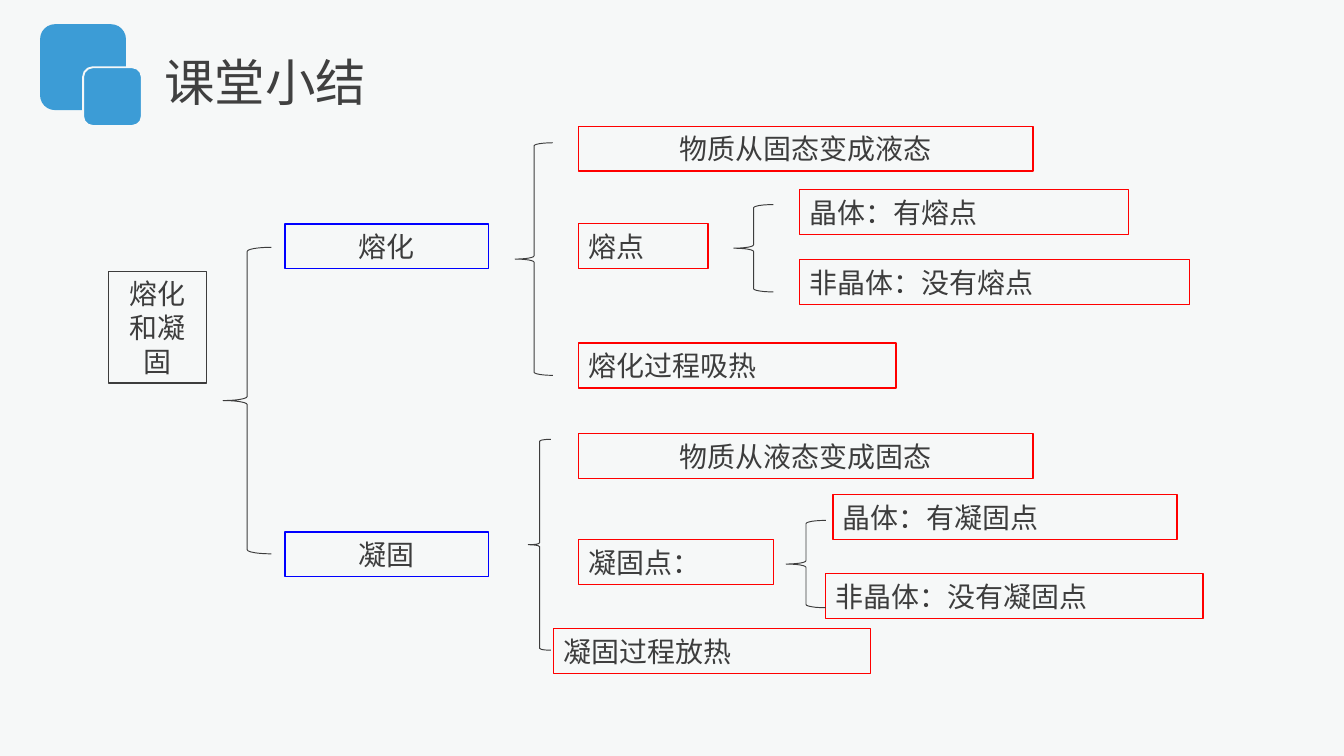
from dataclasses import dataclass

import pptx
import pptx.dml.color
import pptx.enum.shapes
import pptx.enum.text
import pptx.util

Pt = pptx.util.Pt
RGB = pptx.dml.color.RGBColor.from_string
SHAPE = pptx.enum.shapes.MSO_SHAPE
ALIGN = pptx.enum.text.PP_ALIGN
ANCHOR = pptx.enum.text.MSO_ANCHOR
AUTO_SIZE = pptx.enum.text.MSO_AUTO_SIZE


@dataclass(frozen=True)
class Theme:
    background: str = "F6F8F8"
    accent: str = "3C9CD6"
    ink: str = "3D3D3D"
    title_ink: str = "404040"
    branch: str = "0000FF"
    detail: str = "FF0000"
    font: str = "Arial"
    title_size: float = 27
    body_size: float = 15
    box_height: float = 24


class SummarySlide:
    def __init__(self, prs, theme):
        self.theme = theme
        self.slide = prs.slides.add_slide(prs.slide_layouts.get_by_name("Title Only"))
        fill = self.slide.background.fill
        fill.solid()
        fill.fore_color.rgb = RGB(theme.background)

    def shape(self, kind, at, line, width, fill=None):
        sp = self.slide.shapes.add_shape(kind, *map(Pt, at))
        sp.shadow.inherit = False
        if fill:
            sp.fill.solid()
            sp.fill.fore_color.rgb = RGB(fill)
        else:
            sp.fill.background()
        sp.line.color.rgb = RGB(line)
        sp.line.width = Pt(width)
        return sp

    def set_text(self, sp, text, size, color, align):
        tf = sp.text_frame
        tf.text = text
        tf.word_wrap = True
        tf.auto_size = AUTO_SIZE.SHAPE_TO_FIT_TEXT
        tf.vertical_anchor = ANCHOR.MIDDLE
        tf.margin_left = tf.margin_right = Pt(5.2)
        tf.margin_top = tf.margin_bottom = Pt(2.7)
        p = tf.paragraphs[0]
        p.alignment = align
        font = p.runs[0].font
        font.name = self.theme.font
        font.size = Pt(size)
        font.color.rgb = RGB(color)

    def title(self, text, at):
        sp = self.slide.shapes.title
        sp.left, sp.top, sp.width, sp.height = map(Pt, at)
        self.set_text(sp, text, self.theme.title_size, self.theme.title_ink, ALIGN.LEFT)

    def badge(self, left, top, side, line):
        self.shape(SHAPE.ROUNDED_RECTANGLE, (left, top, side, side), line, 1,
                   self.theme.accent)

    def box(self, text, left, top, width, line, align=ALIGN.LEFT, height=None):
        at = (left, top, width, height or self.theme.box_height)
        sp = self.shape(SHAPE.RECTANGLE, at, line, 0.75)
        self.set_text(sp, text, self.theme.body_size, self.theme.ink, align)

    def brace(self, *at):
        self.shape(SHAPE.LEFT_BRACE, at, self.theme.ink, 0.5)


def main():
    prs = pptx.Presentation()
    prs.slide_width, prs.slide_height = Pt(720), Pt(405)
    theme = Theme()
    summary = SummarySlide(prs, theme)

    summary.badge(22, 13.5, 45, theme.accent)
    summary.badge(44.5, 36, 31.5, theme.background)
    summary.title("课堂小结", (83, 24.5, 128, 38))

    summary.box("熔化和凝固", 58.2, 145.5, 52.5, theme.ink, ALIGN.CENTER, 59.8)
    for text, top in (("熔化", 120), ("凝固", 285)):
        summary.box(text, 152.6, top, 109, theme.branch, ALIGN.CENTER)

    detail_left = 310
    for text, top in (("物质从固态变成液态", 67.7), ("物质从液态变成固态", 232.3)):
        summary.box(text, detail_left, top, 243.4, theme.detail, ALIGN.CENTER)

    for text, left, top, width in (
        ("熔点", detail_left, 119.7, 69.3),
        ("晶体：有熔点", 428.3, 101.5, 176.4),
        ("非晶体：没有熔点", 428.3, 139, 209),
        ("熔化过程吸热", detail_left, 183.8, 170),
        ("凝固点：", detail_left, 289, 104.4),
        ("晶体：有凝固点", 446.2, 265, 184.3),
        ("非晶体：没有凝固点", 442.2, 307.3, 202.3),
        ("凝固过程放热", 296.5, 336.8, 170),
    ):
        summary.box(text, left, top, width, theme.detail)

    for at in (
        (119.5, 132.5, 25.9, 164.2),
        (276, 76.5, 20.2, 124.6),
        (283, 235.4, 12.2, 113),
        (393.1, 109.6, 21.2, 46.8),
        (421.2, 278.8, 21.2, 46.8),
    ):
        summary.brace(*at)

    prs.save("out.pptx")


if __name__ == "__main__":
    main()
